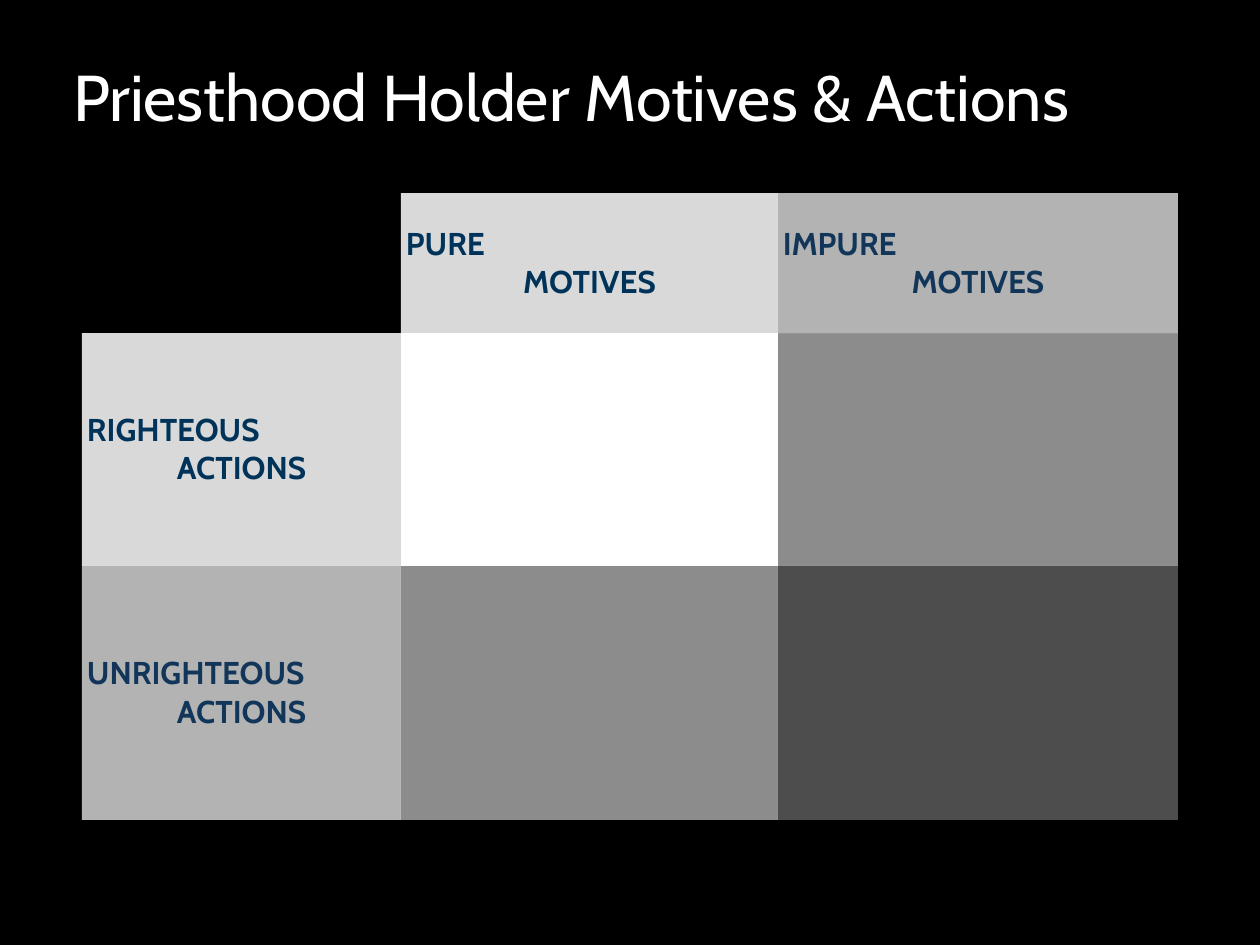
from dataclasses import dataclass

from lxml.etree import SubElement
from pptx import Presentation
from pptx.dml.color import RGBColor
from pptx.enum.text import MSO_ANCHOR, MSO_AUTO_SIZE, PP_ALIGN
from pptx.oxml import parse_xml
from pptx.oxml.ns import nsdecls, qn
from pptx.util import Emu, Pt

PX_PER_INCH = 126
FONT = "Cabin"
NO_STYLE = "{2D5ABB26-0587-4C30-8999-92F81FD0307C}"
HAIRLINE = 400
COLUMNS = [319, 377, 400]
ROWS = [140, 233, 254]


@dataclass
class Quadrant:
    row: int
    column: int
    opacity: int
    label: str = ""
    ink: str = "003359"


QUADRANTS = [
    Quadrant(0, 1, 85, "PURE\nMOTIVES"),
    Quadrant(0, 2, 70, "IMPURE\nMOTIVES", "123659"),
    Quadrant(1, 0, 85, "RIGHTEOUS\nACTIONS"),
    Quadrant(1, 1, 100),
    Quadrant(1, 2, 55),
    Quadrant(2, 0, 70, "UNRIGHTEOUS\nACTIONS", "123659"),
    Quadrant(2, 1, 55),
    Quadrant(2, 2, 30),
]


def px(length: int) -> Emu:
    return Emu(round(length * 914400 / PX_PER_INCH))


def color(value: str) -> RGBColor:
    return RGBColor.from_string(value)


def format_span(span, size: int, ink: str, bold: bool = False) -> None:
    span.font.name = FONT
    span.font.size = Pt(size)
    span.font.bold = bold
    span.font.color.rgb = color(ink)


def add_hairlines(cell) -> None:
    properties = cell._tc.get_or_add_tcPr()
    for position, side in enumerate(("lnL", "lnR", "lnT", "lnB")):
        line = parse_xml(
            f'<a:{side} {nsdecls("a")} w="{HAIRLINE}"><a:solidFill><a:srgbClr val="000000"/>'
            f'</a:solidFill><a:prstDash val="sysDashDotDot"/></a:{side}>'
        )
        properties.insert(position, line)


def draw_quadrant(table, quadrant: Quadrant) -> None:
    cell = table.cell(quadrant.row, quadrant.column)
    cell.fill.solid()
    cell.fill.fore_color.rgb = color("FFFFFF")
    if quadrant.opacity < 100:
        white = cell._tc.tcPr.find(f".//{qn('a:srgbClr')}")
        SubElement(white, qn("a:alpha"), val=str(quadrant.opacity * 1000))
    add_hairlines(cell)
    if not quadrant.label:
        return

    cell.vertical_anchor = MSO_ANCHOR.MIDDLE
    cell.margin_left = cell.margin_right = px(5)
    cell.margin_top = cell.margin_bottom = px(5)
    paragraph = cell.text_frame.paragraphs[0]
    paragraph.alignment = PP_ALIGN.CENTER
    # Both words stay in one span, so the newline is kept inside it
    span = paragraph.add_run()
    span.text = quadrant.label
    format_span(span, 18, quadrant.ink, bold=True)


def add_free_outline(shape) -> None:
    outline = parse_xml(
        f'<a:custGeom {nsdecls("a")}><a:avLst/><a:gdLst/><a:ahLst/><a:cxnLst/>'
        '<a:rect l="l" t="t" r="r" b="b"/><a:pathLst><a:path w="100" h="100">'
        '<a:moveTo><a:pt x="0" y="0"/></a:moveTo><a:lnTo><a:pt x="100" y="0"/></a:lnTo>'
        '<a:lnTo><a:pt x="100" y="100"/></a:lnTo><a:lnTo><a:pt x="0" y="100"/></a:lnTo>'
        '<a:close/></a:path></a:pathLst></a:custGeom>'
    )
    shape._element.spPr.insert(1, outline)


def draw_title(page, text: str) -> None:
    title = page.shapes.title
    title.left, title.top, title.width, title.height = px(73), px(54), px(1155), px(83)
    add_free_outline(title)
    frame = title.text_frame
    frame.text = text
    frame.auto_size = MSO_AUTO_SIZE.NONE
    frame.word_wrap = True
    frame.vertical_anchor = MSO_ANCHOR.MIDDLE
    frame.margin_left = frame.margin_right = frame.margin_top = frame.margin_bottom = 0
    frame.paragraphs[0].alignment = PP_ALIGN.LEFT
    format_span(frame.paragraphs[0].runs[0], 37, "FFFFFF")


def draw_matrix(page) -> None:
    frame = page.shapes.add_table(
        len(ROWS), len(COLUMNS), px(82), px(193), px(sum(COLUMNS)), px(sum(ROWS))
    )
    table = frame.table
    table.first_row = table.horz_banding = False
    table._tbl.tblPr.find(qn("a:tableStyleId")).text = NO_STYLE
    for column, width in zip(table.columns, COLUMNS):
        column.width = px(width)
    for row, height in zip(table.rows, ROWS):
        row.height = px(height)
    table.cell(0, 0).fill.background()
    for quadrant in QUADRANTS:
        draw_quadrant(table, quadrant)


def main() -> None:
    deck = Presentation()
    deck.slide_width, deck.slide_height = px(1260), px(945)
    page = deck.slides.add_slide(deck.slide_layouts[5])
    page.background.fill.solid()
    page.background.fill.fore_color.rgb = color("000000")

    draw_matrix(page)
    draw_title(page, "Priesthood Holder Motives & Actions")
    deck.save("out.pptx")


if __name__ == "__main__":
    main()
